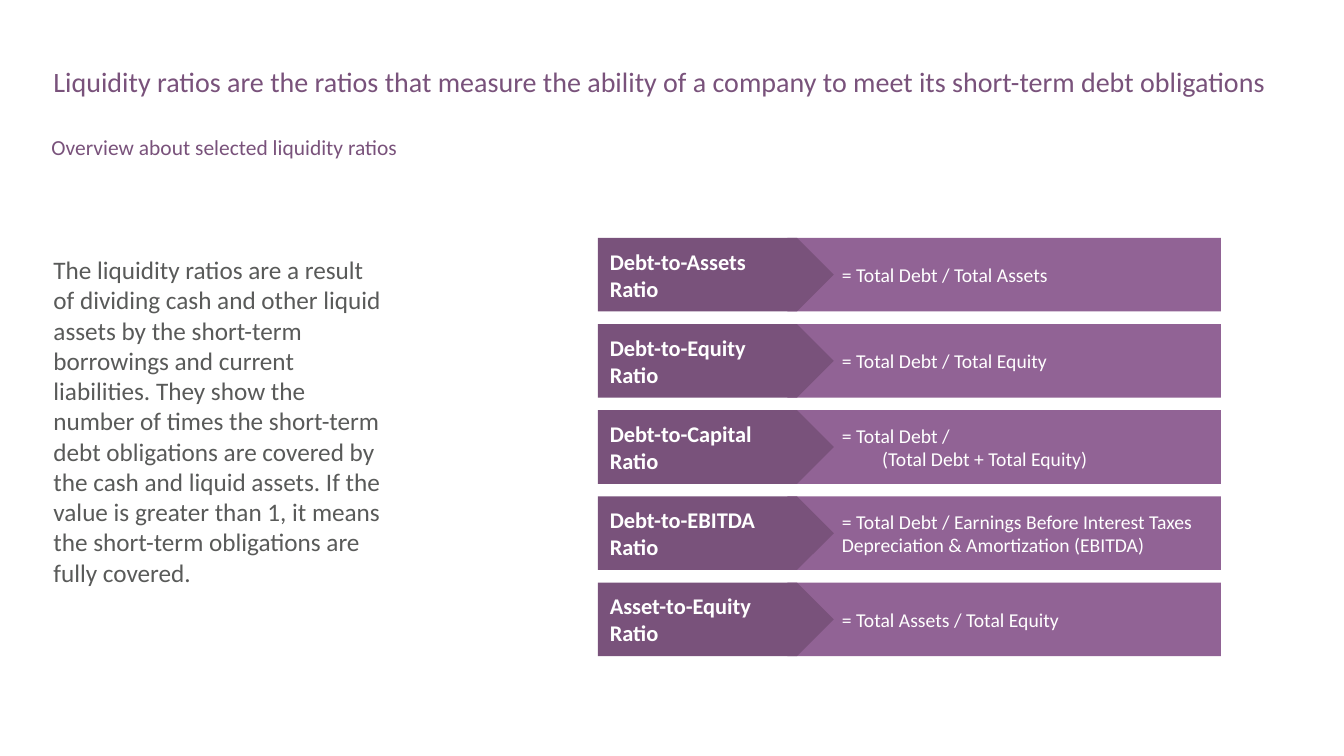
import pptx
import pptx.util
import pptx.dml.color
import pptx.enum.shapes
import pptx.enum.text

Inches, Pt = pptx.util.Inches, pptx.util.Pt
RGB = pptx.dml.color.RGBColor
SHAPE = pptx.enum.shapes.MSO_SHAPE
ANCHOR = pptx.enum.text.MSO_ANCHOR
ALIGN = pptx.enum.text.PP_ALIGN

DARK = RGB(0x79, 0x52, 0x7B)
LIGHT = RGB(0x91, 0x63, 0x95)
GREY = RGB(0x59, 0x5A, 0x59)
WHITE = RGB(0xFF, 0xFF, 0xFF)

TITLE = ("Liquidity ratios are the ratios that measure the ability of a company "
         "to meet its short-term debt obligations")
SUB = "Overview about selected liquidity ratios"
BODY = ("The liquidity ratios are a result of dividing cash and other liquid assets by "
        "the short-term borrowings and current liabilities. They show the number of "
        "times the short-term debt obligations are covered by the cash and liquid "
        "assets. If the value is greater than 1, it means the short-term obligations "
        "are fully covered.")
RATIOS = [
    ("Debt-to-Assets Ratio", ["= Total Debt / Total Assets"]),
    ("Debt-to-Equity Ratio", ["= Total Debt / Total Equity"]),
    ("Debt-to-Capital Ratio", ["= Total Debt /", "(Total Debt + Total Equity)"]),
    ("Debt-to-EBITDA Ratio", ["= Total Debt / Earnings Before Interest Taxes "
                              "Depreciation & Amortization (EBITDA)"]),
    ("Asset-to-Equity Ratio", ["= Total Assets / Total Equity"]),
]

# placeholder index: text, box, anchor, line spacing, font
HOLDERS = {
    0: (TITLE, (0.43, 0.63, 12.54, 0.64), ANCHOR.TOP, 0.9, (20, DARK, False)),
    1: (BODY, (0.43, 1.79, 3.49, 4.77), ANCHOR.MIDDLE, 1.0, (18, GREY, False)),
    3: (SUB, (0.41, 1.35, 12.56, 0.28), ANCHOR.TOP, 0.7, (15.3, DARK, False)),
}
TOP, STEP, HIGH = 2.36, 0.855, 0.73
INSET, TIGHT, INDENT = (0.1, 0.05), (0.04, 0.02), 0.4


def style(shape, lines, anchor, space, font, inset=INSET):
    """Write lines into a shape; lines after the first are indented."""
    frame = shape.text_frame
    size, color, bold = font
    side, edge = map(Inches, inset)
    look = {"word_wrap": True, "auto_size": pptx.enum.text.MSO_AUTO_SIZE.NONE,
            "vertical_anchor": anchor, "margin_left": side, "margin_right": side,
            "margin_top": edge, "margin_bottom": edge}
    for name, value in look.items():
        setattr(frame, name, value)
    frame.text = "\n".join(lines)
    for i, para in enumerate(frame.paragraphs):
        if i:
            para._p.get_or_add_pPr().set("marL", str(Inches(INDENT)))
        para.alignment = ALIGN.LEFT
        para.line_spacing = space
        para.space_before = Pt(0)
        for run in para.runs:
            run.font.color.rgb = color
            for name, value in {"name": "Calibri", "size": Pt(size), "bold": bold}.items():
                setattr(run.font, name, value)


def block(slide, kind, box, color):
    shape = slide.shapes.add_shape(kind, *map(Inches, box))
    shape.shadow.inherit = False
    shape.fill.solid()
    shape.fill.fore_color.rgb = color
    shape.line.fill.background()


def label(slide, box, lines, font, inset):
    shape = slide.shapes.add_textbox(*map(Inches, box))
    style(shape, lines, ANCHOR.MIDDLE, 1.0, font, inset)


def main():
    deck = pptx.Presentation()
    deck.slide_width, deck.slide_height = Inches(13.33), Inches(7.5)
    slide = deck.slides.add_slide(deck.slide_layouts[4])

    for shape in list(slide.placeholders):
        index = shape.placeholder_format.idx
        if index not in HOLDERS:
            shape.element.getparent().remove(shape.element)
            continue
        text, box, anchor, space, font = HOLDERS[index]
        shape.left, shape.top, shape.width, shape.height = map(Inches, box)
        style(shape, [text], anchor, space, font)

    for row, (name, rule) in enumerate(RATIOS):
        y = TOP + row * STEP
        block(slide, SHAPE.RECTANGLE, (7.81, y, 4.3, HIGH), LIGHT)
        block(slide, SHAPE.PENTAGON, (5.93, y, 2.34, HIGH), DARK)
        label(slide, (5.95, y, 2.04, HIGH), [name], (16, WHITE, True), INSET)
        label(slide, (8.31, y, 3.8, HIGH), rule, (14, WHITE, False), TIGHT)

    deck.save("out.pptx")


if __name__ == "__main__":
    main()
